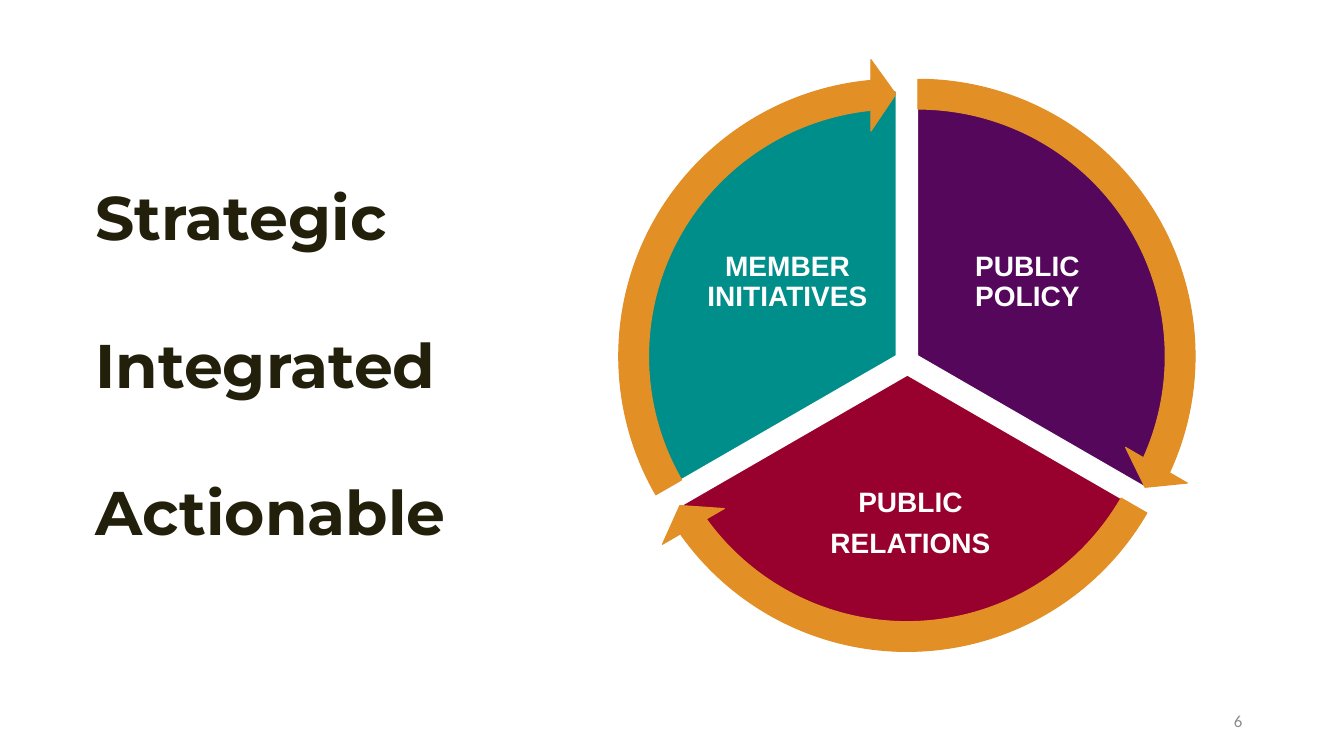
from pptx import Presentation
from pptx.dml.color import RGBColor as RGB
from pptx.enum.shapes import MSO_SHAPE as Kind
from pptx.enum.text import MSO_ANCHOR as Anchor, PP_ALIGN as Align
from pptx.util import Pt

PX = 9144
WHITE = RGB(0xFF, 0xFF, 0xFF)
PLUM = RGB(0x54, 0x07, 0x5B)
RED = RGB(0x98, 0x00, 0x2E)
TEAL = RGB(0x00, 0x8E, 0x8A)
AMBER = RGB(0xE2, 0x8F, 0x26)
DARK = RGB(0x22, 0x1F, 0x0A)
GRAY = RGB(0x8C, 0x8C, 0x8C)
TURN, THIRD, HEAD = 216, 72, 3.27
PIE, RING = 526, 591

SECTORS = [
    (162, PLUM, (647, 90), (615, 58), ["PUBLIC POLICY"], (925, 202, 188, 157)),
    (18, RED, (637, 109), (604, 76), ["PUBLIC", "RELATIONS"], (762, 451, 282, 138)),
    (90, TEAL, (626, 90), (593, 58), ["MEMBER INITIATIVES"], (687, 202, 188, 157)),
]


class Deck:
    """Draws styled elements on one slide, with lengths in hundredths of an inch."""

    def __init__(self, wide, high):
        self.file = Presentation()
        self.file.slide_width, self.file.slide_height = wide * PX, high * PX
        self.slide = self.file.slides.add_slide(self.file.slide_layouts[6])

    def shape(self, kind, spot, size, fill, edge, width, turns):
        box = [n * PX for n in (*spot, size, size)]
        item = self.slide.shapes.add_shape(kind, *box)
        item.shadow.inherit = False
        item.fill.solid()
        item.fill.fore_color.rgb = fill
        item.line.color.rgb = edge
        item.line.width = Pt(width)
        for i, turn in enumerate(turns):
            item.adjustments[i] = turn

    def sector(self, start, fill, spot):
        turns = start, (start + THIRD) % TURN
        self.shape(Kind.PIE, spot, PIE, fill, WHITE, 1, turns)

    def arrow(self, start, spot):
        end = (start + THIRD - HEAD) % TURN
        turns = 0.05, HEAD, end, start, 0.06
        self.shape(Kind.CIRCULAR_ARROW, spot, RING, AMBER, AMBER, 0.75, turns)

    def text(self, lines, box, font, size, color, bold=True, align=Align.LEFT,
             anchor=Anchor.MIDDLE, inset=None, pitch=1.0, after=0):
        frame = self.slide.shapes.add_textbox(*[n * PX for n in box]).text_frame
        frame.word_wrap = True
        frame.vertical_anchor = anchor
        if inset is not None:
            frame.margin_left = frame.margin_right = inset * PX
            frame.margin_top = frame.margin_bottom = inset * PX
        frame.text = "\n".join(lines)
        for para in frame.paragraphs:
            para.alignment = align
            para.line_spacing = pitch
            para.space_after = Pt(after)
            para.font.name, para.font.size = font, Pt(size)
            para.font.bold, para.font.color.rgb = bold, color

    def label(self, lines, box):
        self.text(lines, box, "Arial", 20, WHITE, align=Align.CENTER,
                  inset=3, pitch=0.9, after=8)

    def save(self):
        self.file.save("out.pptx")


def main():
    deck = Deck(1333, 750)
    for start, fill, spot, _, lines, box in SECTORS:
        deck.sector(start, fill, spot)
        deck.label(lines, box)
    for start, _, _, spot, _, _ in SECTORS:
        deck.arrow(start, spot)
    deck.text(["Strategic", "Integrated", "Actionable"], (85, 173, 433, 380),
              "Montserrat", 44, DARK, anchor=Anchor.TOP, after=52.5)
    deck.text(["6"], (942, 695, 300, 40), "Calibri", 12, GRAY,
              bold=False, align=Align.RIGHT)
    deck.save()


if __name__ == "__main__":
    main()
